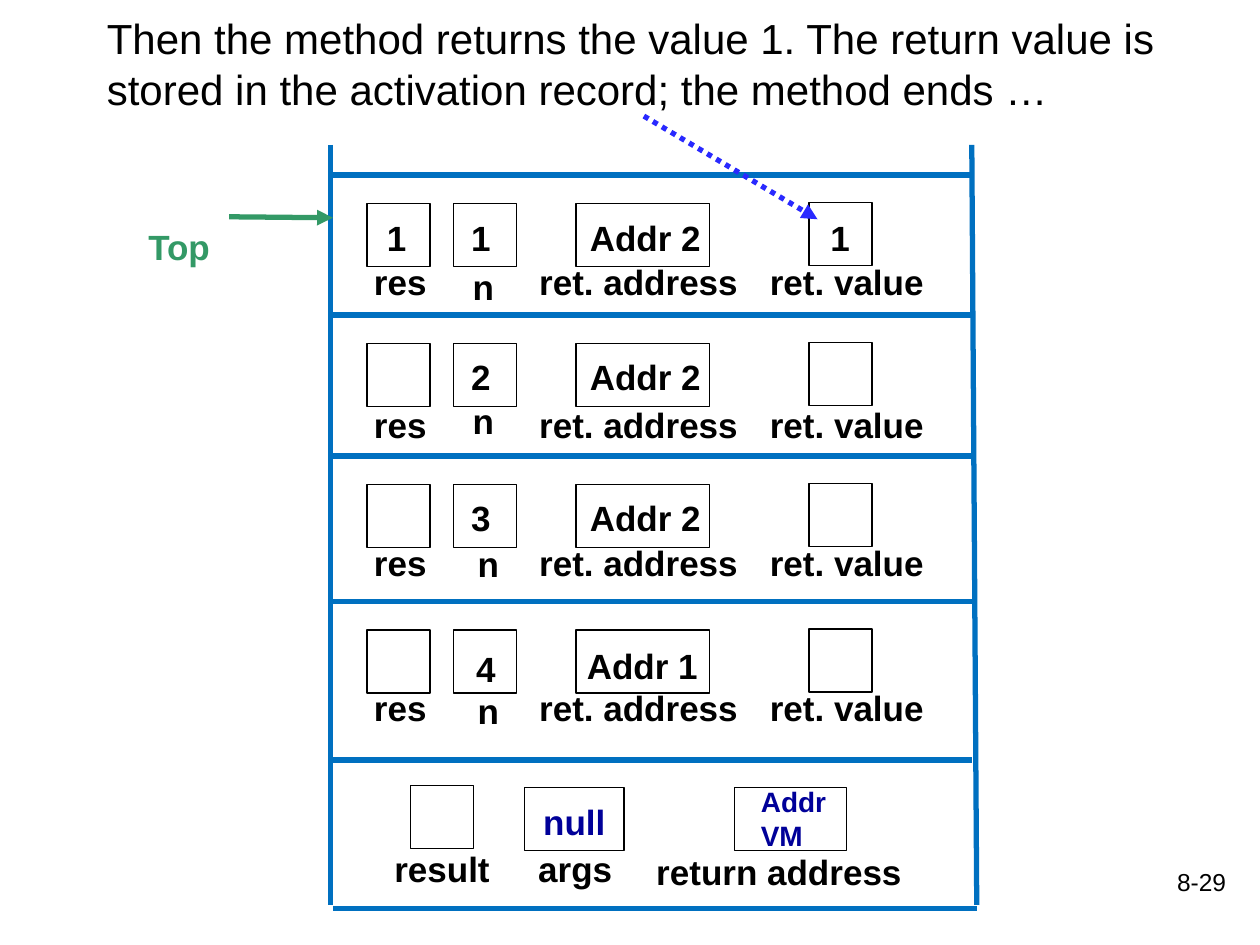
from pptx import Presentation
from pptx import util as u
from pptx.dml import color
from pptx.enum import dml, shapes, text
from pptx.oxml import ns
from lxml import etree

Cm, Pt = u.Cm, u.Pt
BLACK, BLUE, NAVY, GREEN, VIOLET = "000000", "0070C0", "000099", "339966", "2929FF"
FRAME_LEFT, FRAME_WIDTH, TEXT_HEIGHT = 6.71, 12.88, 1.12
BOX_HEIGHT = 1.27


def rgb(value):
    return color.RGBColor.from_string(value)


def apply(target, values):
    for name, value in values.items():
        setattr(target, name, value)


def write(frame, lines, size=20, ink=BLACK, bold=True, wrap=False, **para_format):
    apply(frame, {"word_wrap": wrap, "auto_size": text.MSO_AUTO_SIZE.NONE,
                  "vertical_anchor": text.MSO_ANCHOR.TOP})
    for index, line in enumerate(lines.split("\n")):
        para = frame.paragraphs[0] if index == 0 else frame.add_paragraph()
        apply(para, para_format)
        span = para.add_run()
        span.text = line
        apply(span.font, {"name": "Arial", "size": Pt(size), "bold": bold})
        span.font.color.rgb = rgb(ink)


def add_text(page, left, top, width, lines, height=TEXT_HEIGHT, **style):
    box = page.shapes.add_textbox(Cm(left), Cm(top), Cm(width), Cm(height))
    write(box.text_frame, lines, **style)


def add_line(page, start, end, ink=BLUE, arrow=False, dash=None):
    line = page.shapes.add_connector(
        shapes.MSO_CONNECTOR.STRAIGHT, *[Cm(value) for value in (*start, *end)])
    apply(line.line, {"width": Pt(3), "dash_style": dash})
    line.line.color.rgb = rgb(ink)
    if arrow:
        etree.SubElement(line.line._get_or_add_ln(), ns.qn("a:tailEnd"), type="triangle")
    etree.SubElement(line._element.spPr, ns.qn("a:effectLst"))


def add_cell(page, left, top, width):
    cell = page.shapes.add_shape(
        shapes.MSO_SHAPE.RECTANGLE, Cm(left), Cm(top), Cm(width), Cm(BOX_HEIGHT))
    cell.shadow.inherit = False
    cell.fill.background()
    cell.line.color.rgb = rgb(BLACK)
    cell.line.width = Pt(0.75)


def add_heading(page, left, top, width, height):
    page.shapes.title.element.getparent().remove(page.shapes.title.element)
    body = page.placeholders[1]
    apply(body, {"left": Cm(left), "top": Cm(top), "width": Cm(width), "height": Cm(height)})
    write(body.text_frame,
          "Then the method returns the value 1. The return value is stored in the "
          "activation record; the method ends …",
          size=24, bold=False, wrap=True, space_before=Pt(4.8))
    props = body.text_frame.paragraphs[0]._p.get_or_add_pPr()
    props.set("marL", "0")
    props.set("indent", "0")
    etree.SubElement(props, ns.qn("a:buNone"))


def add_stack_frame(page, left, top, width, bottom, levels):
    right = left + width
    for level in levels:
        add_line(page, (left, level), (right, level))
    add_line(page, (left - 0.05, top), (left - 0.05, bottom))
    add_line(page, (right + 0.1, bottom), (right, top))
    add_line(page, (left, bottom + 0.08), (right + 0.1, bottom + 0.08))


def add_call_record(page, left, top, values, label_drop, n_label, value_shift):
    columns = [
        ("res", 0.69, 1.27, 0.58, 0.58, 1.57, 0.84, 0.91),
        ("n", 2.44, 1.27, 0.58, 2.57, 0.94, 2.54, 0.91),
        ("ret. address", 4.9, 2.69, 0.58, 3.91, 4.55, 4.93, 2.77),
        ("ret. value", 9.6, 1.27, 0.56, 8.56, 3.63, 9.78, 0.91),
    ]
    for column, value in zip(columns, values):
        name, cell_x, cell_width, cell_y, label_x, label_width, value_x, value_width = column
        shift, drop = n_label if name == "n" else (0, label_drop)
        add_cell(page, left + cell_x, top + cell_y, cell_width)
        add_text(page, left + label_x + shift, top + drop, label_width, name)
        if value:
            shift, drop = value_shift.get(name, (0, 0))
            add_text(page, left + value_x + shift, top + 0.7 + drop, value_width, value)


def add_main_record(page, left, top):
    add_cell(page, left + 1.57, top + 0.51, 1.27)
    add_cell(page, left + 3.86, top + 0.56, 2.01)
    add_cell(page, left + 8.1, top + 0.56, 2.26)
    add_text(page, left + 0.99, top + 1.65, 2.44, "result")
    add_text(page, left + 3.89, top + 1.65, 2.01, "args")
    add_text(page, left + 6.27, top + 1.7, 5.92, "return address", wrap=True)
    add_text(page, left + 3.99, top + 0.69, 1.78, "null", ink=NAVY)
    add_text(page, left + 8.38, top + 0.38, 1.83, "Addr\nVM", height=1.63, size=16, ink=NAVY)


def add_top_pointer(page, left, top):
    add_text(page, left, top + 0.05, 1.78, "Top", ink=GREEN)
    add_line(page, (left + 1.88, top), (left + 3.97, top + 0.02), ink=GREEN, arrow=True)


def main():
    deck = Presentation()
    apply(deck, {"slide_width": Cm(25.4), "slide_height": Cm(19.05)})
    page = deck.slides.add_slide(deck.slide_layouts[1])
    add_heading(page, 1.9, 0.13, 23.06, 3.2)

    records = [
        (3.53, ("1", "1", "Addr 2", "1"), 1.6, (0, 1.7), {}),
        (6.35, ("", "2", "Addr 2", ""), 1.65, (0, 1.57), {}),
        (9.19, ("", "3", "Addr 2", ""), 1.6, (0.1, 1.63), {}),
        (12.12, ("", "4", "Addr 1", ""), 1.6, (0.1, 1.65),
         {"n": (0.1, 0.11), "ret. address": (-0.06, 0.04)}),
    ]
    main_top = 15.32
    levels = [record[0] for record in records] + [main_top]
    add_stack_frame(page, FRAME_LEFT, 2.92, FRAME_WIDTH, 18.24, levels)
    for record in records:
        add_call_record(page, FRAME_LEFT, *record)
    add_main_record(page, FRAME_LEFT, main_top)
    add_top_pointer(page, 2.74, 4.37)
    add_line(page, (12.98, 2.34), (16.48, 4.42), ink=VIOLET, arrow=True,
             dash=dml.MSO_LINE.ROUND_DOT)
    add_text(page, 19.69, 17.35, 5.28, "8-29", height=1.27, size=14, bold=False,
             wrap=True, alignment=text.PP_ALIGN.RIGHT)
    deck.save("out.pptx")


if __name__ == "__main__":
    main()
